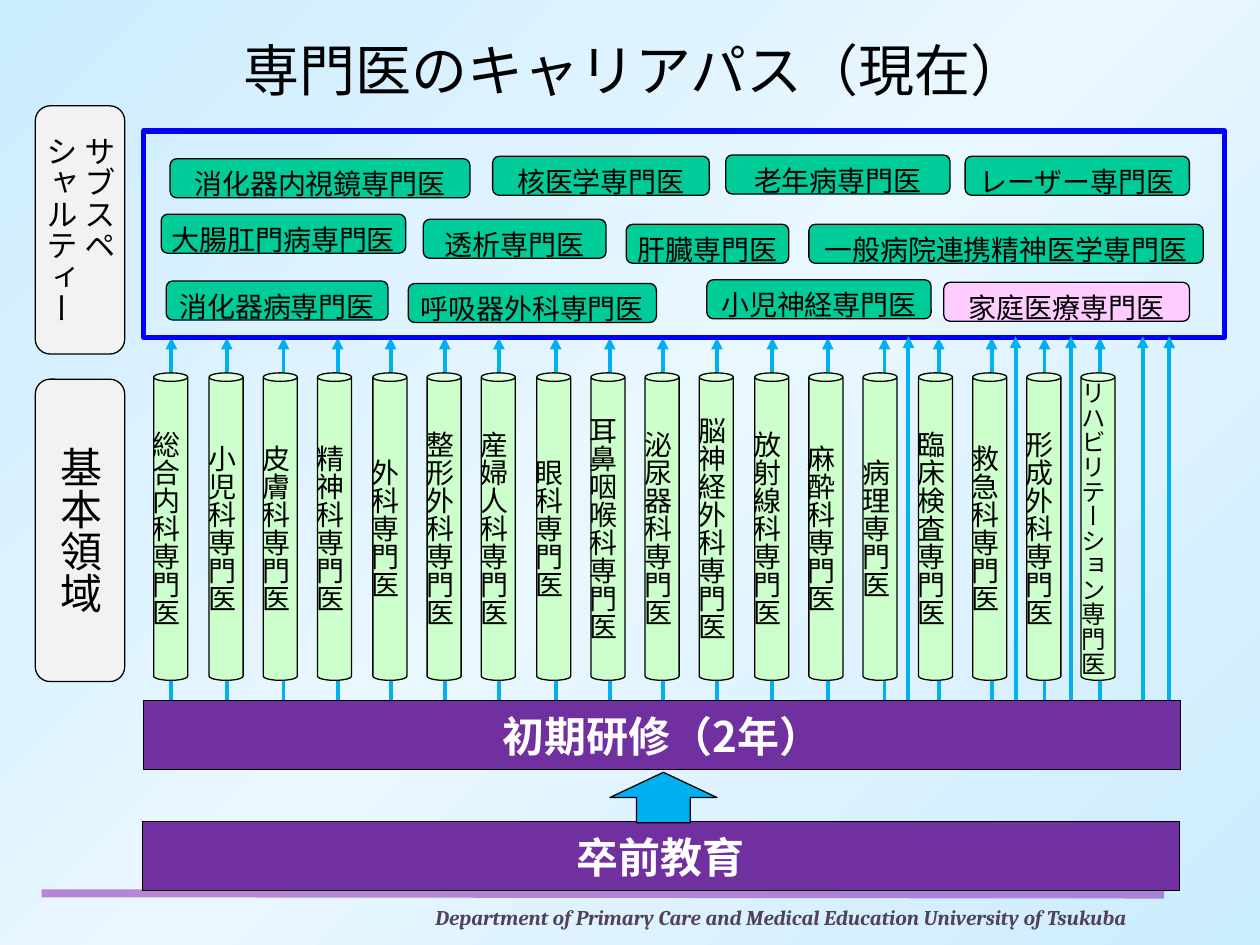
"""Builds the slide on career paths of medical specialists."""
from copy import deepcopy

from pptx import Presentation
from pptx import util as u
from pptx.dml.color import RGBColor
from pptx.enum import shapes, text
from pptx.oxml import ns
from lxml import etree

SCALE = 9144
SANS = "Noto Sans CJK JP"
SKY, GREEN, PINK, MINT = "00B0F0", "00CC99", "FFCCFF", "CCFFCC"
PURPLE, GREY, BLACK, WHITE = "7030A0", "F2F2F2", "000000", "FFFFFF"
FORM, MID = shapes.MSO_SHAPE, text.MSO_ANCHOR.MIDDLE
TOP, LEFT, CENTER = text.MSO_ANCHOR.TOP, text.PP_ALIGN.LEFT, text.PP_ALIGN.CENTER

BASICS = ["総合内科", "小児科", "皮膚科", "精神科", "外科", "整形外科",
          "産婦人科", "眼科", "耳鼻咽喉科", "泌尿器科", "脳神経外科", "放射線科",
          "麻酔科", "病理", "臨床検査", "救急科", "形成外科", "リハビリテーション"]
STEMS = [136, 180, 225, 268, 310, 353, 396, 441, 484,
         526, 569, 613, 657, 702, 745, 787, 829, 873]
BYPASS = [721, 806, 850, 907, 928]
SUBS = [
    ("消化器内視鏡", 135, 126, 238), ("核医学", 391, 124, 172),
    ("老年病", 576, 123, 178), ("レーザー", 766, 124, 178),
    ("大腸肛門病", 128, 170, 194), ("透析", 336, 174, 145),
    ("肝臓", 497, 178, 129), ("一般病院連携精神医学", 642, 178, 313),
    ("消化器病", 132, 223, 176), ("呼吸器外科", 324, 225, 197),
    ("小児神経", 561, 222, 178), ("家庭医療", 749, 224, 195),
]


def px(*sizes):
    """Turn px into EMU."""
    return [u.Emu(size * SCALE) for size in sizes]


def hue(code):
    """Turn a hex string into a colour."""
    return RGBColor.from_string(code)


def add_tag(host, name, **traits):
    """Append a drawing tag to a node."""
    return etree.SubElement(host, ns.qn(name), traits)


def write(frame, lines, size, color=BLACK, align=CENTER, anchor=TOP,
          face=SANS, bold=False, slant=False):
    """Fill a text frame with one run per line."""
    frame.vertical_anchor = anchor
    for count, line in enumerate(lines):
        para = frame.add_paragraph() if count else frame.paragraphs[0]
        para.alignment = align
        run = para.add_run()
        run.text = line
        font = run.font
        font.size, font.bold, font.italic = u.Pt(size), bold, slant
        font.color.rgb = hue(color)
        font.name = face
        add_tag(font._element, "a:ea", typeface=face)


def add_form(slide, kind, box, fill=None, line=BLACK, width=0.75):
    """Add a preset shape without a shadow."""
    form = slide.shapes.add_shape(kind, *px(*box))
    form.shadow.inherit = False
    if fill:
        form.fill.solid()
        form.fill.fore_color.rgb = hue(fill)
    else:
        form.fill.background()
    form.line.color.rgb = hue(line)
    form.line.width = u.Pt(width)
    return form


def add_label(slide, kind, box, fill, lines, size, upright=False, **style):
    """Add a preset shape that holds unwrapped text."""
    form = add_form(slide, kind, box, fill)
    frame = form.text_frame
    frame.word_wrap = False
    if upright:
        body = frame._txBody.bodyPr
        body.set("vert", "eaVert")
        body.set("anchorCtr", "1")
    write(frame, lines, size, **style)
    return frame


def add_line(slide, start, end, color=SKY, width=2.25, head=False):
    """Add a straight line, with an arrowhead on request."""
    line = slide.shapes.add_connector(
        shapes.MSO_CONNECTOR.STRAIGHT, *px(*start, *end))
    line.line.color.rgb = hue(color)
    line.line.width = u.Pt(width)
    if head:
        add_tag(line.line._get_or_add_ln(), "a:tailEnd", type="triangle")
    add_tag(line._element.spPr, "a:effectLst")
    return line


def paint_back(slide):
    """Paint a diagonal three-stop background."""
    fill = slide.background.fill
    fill.gradient()
    fill.gradient_angle = 315
    first = fill.gradient_stops[0]._gs
    first.addnext(deepcopy(first))
    for count, code in enumerate(["CCECFF", "E9F7FF", "CCECFF"]):
        stop = fill.gradient_stops[count]
        stop.position = count / 2
        stop.color.rgb = hue(code)


def add_foot(slide):
    """Add the footer rule and the department name."""
    rule = add_line(slide, (33, 709), (924, 710), "7F00AC", 4.5)
    color = rule._element.spPr.find(".//" + ns.qn("a:srgbClr"))
    add_tag(color, "a:alpha", val="46000")
    box = slide.shapes.add_textbox(*px(251, 713, 738, 30))
    box.text_frame.word_wrap = True
    write(box.text_frame,
          ["Department of Primary Care and Medical Education University of Tsukuba"],
          12, "524258", face="Cambria", bold=True, slant=True)


def add_title(slide):
    """Place and format the title."""
    title = slide.shapes.title
    title.left, title.top, title.width, title.height = px(54, 23, 900, 125)
    write(title.text_frame, ["専門医のキャリアパス（現在）"], 32)


def add_subs(slide):
    """Add the subspecialties."""
    for name, left, top, width in SUBS:
        fill = PINK if name == "家庭医療" else GREEN
        add_label(slide, FORM.ROUNDED_RECTANGLE, (left, top, width, 31),
                  fill, [name + "専門医"], 16)


def add_cans(slide):
    """Add the basic fields as evenly spaced upright cans."""
    for count, name in enumerate(BASICS):
        left = round(122.4 + 43.3 * count)
        frame = add_label(slide, FORM.CAN, (left, 296, 27, 244), MINT,
                          [name + "専門医"], 14 if len(name) > 5 else 16,
                          upright=True, anchor=MID)
        frame.margin_left, frame.margin_right = px(4, 12)


def main():
    """Build and save the slide."""
    deck = Presentation()
    deck.slide_width, deck.slide_height = px(1000, 750)
    slide = deck.slides.add_slide(deck.slide_layouts[5])
    paint_back(slide)
    add_foot(slide)
    add_title(slide)
    for stem in STEMS:
        add_line(slide, (stem, 557), (stem, 510))
    add_subs(slide)
    for stem in STEMS:
        add_line(slide, (stem, 316), (stem, 268), head=True)
    add_form(slide, FORM.RECTANGLE, (114, 104, 858, 164), None, "0000FF", 3)
    for stem in BYPASS:
        add_line(slide, (stem, 602), (stem, 267), head=True)
    add_label(slide, FORM.ROUNDED_RECTANGLE, (28, 301, 71, 240), GREY,
              ["基本領域"], 24, upright=True, anchor=MID)
    add_label(slide, FORM.ROUNDED_RECTANGLE, (28, 84, 71, 197), GREY,
              ["サブスペ", "シャルティー"], 18, upright=True,
              align=LEFT, anchor=MID)
    add_cans(slide)
    for name, left, top in [("初期研修（2年）", 114, 556), ("卒前教育", 113, 652)]:
        add_label(slide, FORM.RECTANGLE, (left, top, 823, 55), PURPLE, [name],
                  24, color=WHITE, anchor=MID, bold=True)
    add_form(slide, FORM.UP_ARROW, (484, 613, 85, 40), SKY)
    deck.save("out.pptx")


if __name__ == "__main__":
    main()
